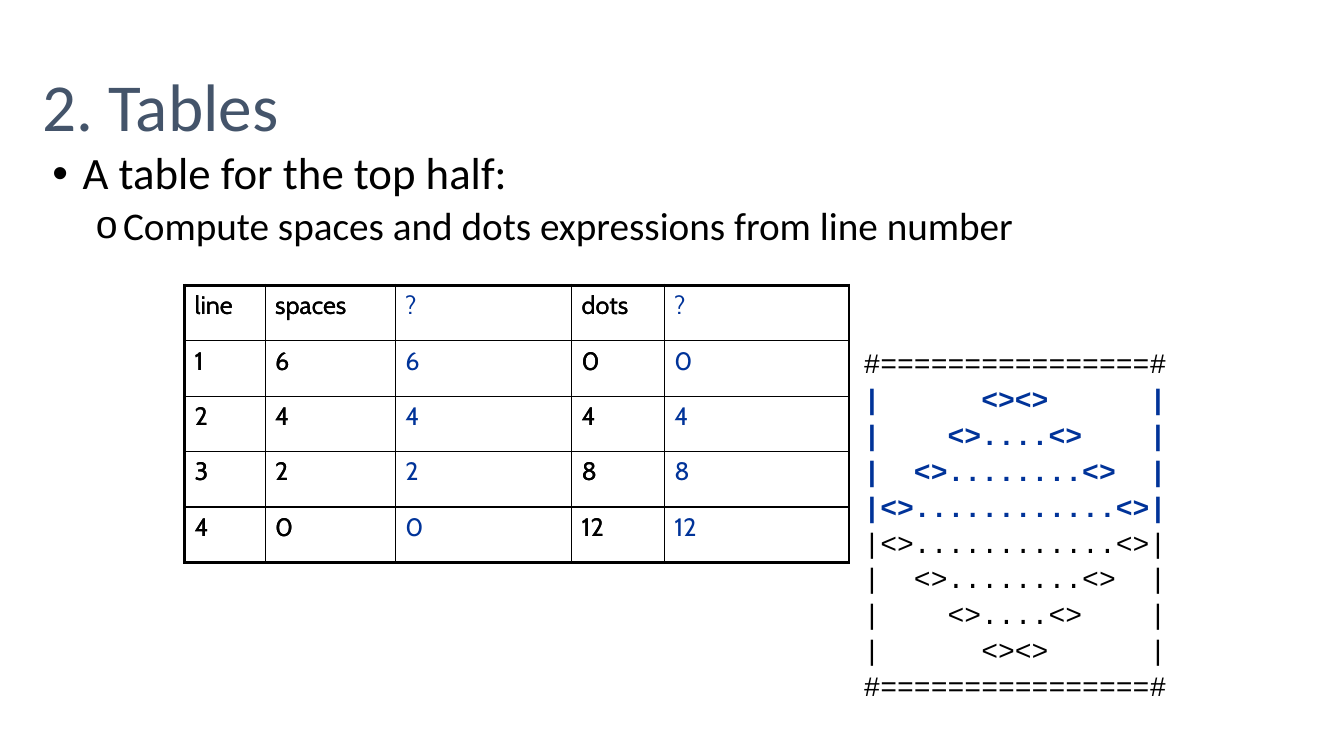
from pptx import Presentation
from pptx.dml.color import RGBColor as RGB
from pptx.enum.text import MSO_ANCHOR as Anchor, MSO_AUTO_SIZE as Fit, PP_ALIGN as Align
from pptx.oxml.ns import qn
from pptx.util import Inches, Pt
from lxml.etree import SubElement as Sub, Element

# Content
TITLE = "2. Tables"
POINTS = [  # text, size key, bullet, indent, hang, space before
    ("A table for the top half:", "point", "•", 0.3, -0.3, 10),
    ("Compute spaces and dots expressions from line number", "sub", "o", 0.7, -0.27, 5),
]
ROWS = [
    ("line", "spaces", "?", "dots", "?"),
    ("1", "6", "6", "0", "0"),
    ("2", "4", "4", "4", "4"),
    ("3", "2", "2", "8", "8"),
    ("4", "0", "0", "12", "12"),
]
GUESS = (2, 4)  # columns in blue, shown only by the upper table
WIDTHS = (0.8, 1.29, 1.75, 0.92, 1.83)
HIGH = 0.55
EDGE = "#================#"
HALF = [
    "|      <><>      |",
    "|    <>....<>    |",
    "|  <>........<>  |",
    "|<>............<>|",
]

# Theme
THEME = {
    "title": {"size": Pt(48), "name": "Calibri", "color": "44546A"},
    "point": {"size": Pt(32), "name": "Calibri", "color": "000000"},
    "sub": {"size": Pt(28), "name": "Calibri", "color": "000000"},
    "cell": {"size": Pt(18), "name": "Cabin", "color": "000000"},
    "guess": {"size": Pt(18), "name": "Cabin", "color": "003399"},
    "code": {"size": Pt(20), "name": "Courier New", "color": "000000", "bold": False},
    "top": {"size": Pt(20), "name": "Courier New", "color": "003399", "bold": True},
    "rule": "000000",
    "thin": Pt(1),
    "thick": Pt(2.25),
}


def put(item, **values):
    for key, value in values.items():
        setattr(item, key, value)


def place(shape, left, top, width, height):
    put(shape, left=Inches(left), top=Inches(top),
        width=Inches(width), height=Inches(height))


def write(para, text, style):
    run = para.add_run()
    run.text = text
    for key, value in THEME[style].items():
        if key == "color":
            run.font.color.rgb = RGB.from_string(value)
        else:
            setattr(run.font, key, value)


def space(para):
    """Space before of 20 percent of the line."""
    before = Sub(para._p.get_or_add_pPr(), qn("a:spcBef"))
    Sub(before, qn("a:spcPct"), val="20000")


def indent(para, left, hang):
    props = para._p.get_or_add_pPr()
    props.set("marL", str(Inches(left)))
    props.set("indent", str(Inches(hang)))
    return props


def border(cell, row, col):
    outer = {"L": col == 0, "R": col == len(WIDTHS) - 1,
             "T": row == 0, "B": row == len(ROWS) - 1}
    props = cell._tc.get_or_add_tcPr()
    for spot, (side, thick) in enumerate(outer.items()):
        line = Element(qn("a:ln" + side), w=str(THEME["thick" if thick else "thin"]))
        Sub(Sub(line, qn("a:solidFill")), qn("a:srgbClr"), val=THEME["rule"])
        props.insert(spot, line)


def grid(slide, full):
    frame = slide.shapes.add_table(
        len(ROWS), len(WIDTHS), Inches(1.83), Inches(2.83),
        Inches(sum(WIDTHS)), Inches(HIGH * len(ROWS)))
    table = frame.table
    put(table, first_row=False, horz_banding=False)
    for col, width in zip(table.columns, WIDTHS):
        col.width = Inches(width)
    for r, row in enumerate(ROWS):
        table.rows[r].height = Inches(HIGH)
        for c, text in enumerate(row):
            cell = table.cell(r, c)
            cell.fill.background()
            border(cell, r, c)
            if full or c not in GUESS:
                para = cell.text_frame.paragraphs[0]
                space(para)
                write(para, text, "guess" if c in GUESS else "cell")


def main():
    deck = Presentation()
    put(deck, slide_width=Inches(13.33), slide_height=Inches(7.5))
    slide = deck.slides.add_slide(deck.slide_layouts[1])

    # Title
    title = slide.shapes.title
    place(title, 0.42, 0, 12.5, 1.45)
    put(title.text_frame, vertical_anchor=Anchor.BOTTOM, auto_size=Fit.NONE,
        margin_left=0, margin_right=0, margin_bottom=0)
    para = title.text_frame.paragraphs[0]
    put(para, alignment=Align.LEFT, line_spacing=0.9)
    write(para, TITLE, "title")

    # Bullets
    body = slide.placeholders[1]
    place(body, 0.42, 1.45, 12.5, 5.66)
    frame = body.text_frame
    frame.auto_size = Fit.NONE
    for level, (text, style, mark, left, hang, before) in enumerate(POINTS):
        para = frame.add_paragraph() if level else frame.paragraphs[0]
        put(para, level=level, line_spacing=0.9, space_before=Pt(before))
        Sub(indent(para, left, hang), qn("a:buChar"), char=mark)
        write(para, text, style)

    # Tables: the plain columns, then every column on top
    for full in (False, True):
        grid(slide, full)

    # Figure in characters, the lower half mirrors the upper
    box = slide.shapes.add_textbox(Inches(8.31), Inches(3.42), Inches(3.36), Inches(3.74))
    frame = box.text_frame
    put(frame, word_wrap=False, auto_size=Fit.SHAPE_TO_FIT_TEXT)
    lines = [EDGE, *HALF, *reversed(HALF), EDGE]
    for n, text in enumerate(lines):
        para = frame.add_paragraph() if n else frame.paragraphs[0]
        put(para, level=1, alignment=Align.RIGHT, line_spacing=0.9)
        space(para)
        indent(para, 0.12, 0)
        write(para, text, "top" if 1 <= n <= len(HALF) else "code")

    deck.save("out.pptx")


if __name__ == "__main__":
    main()
